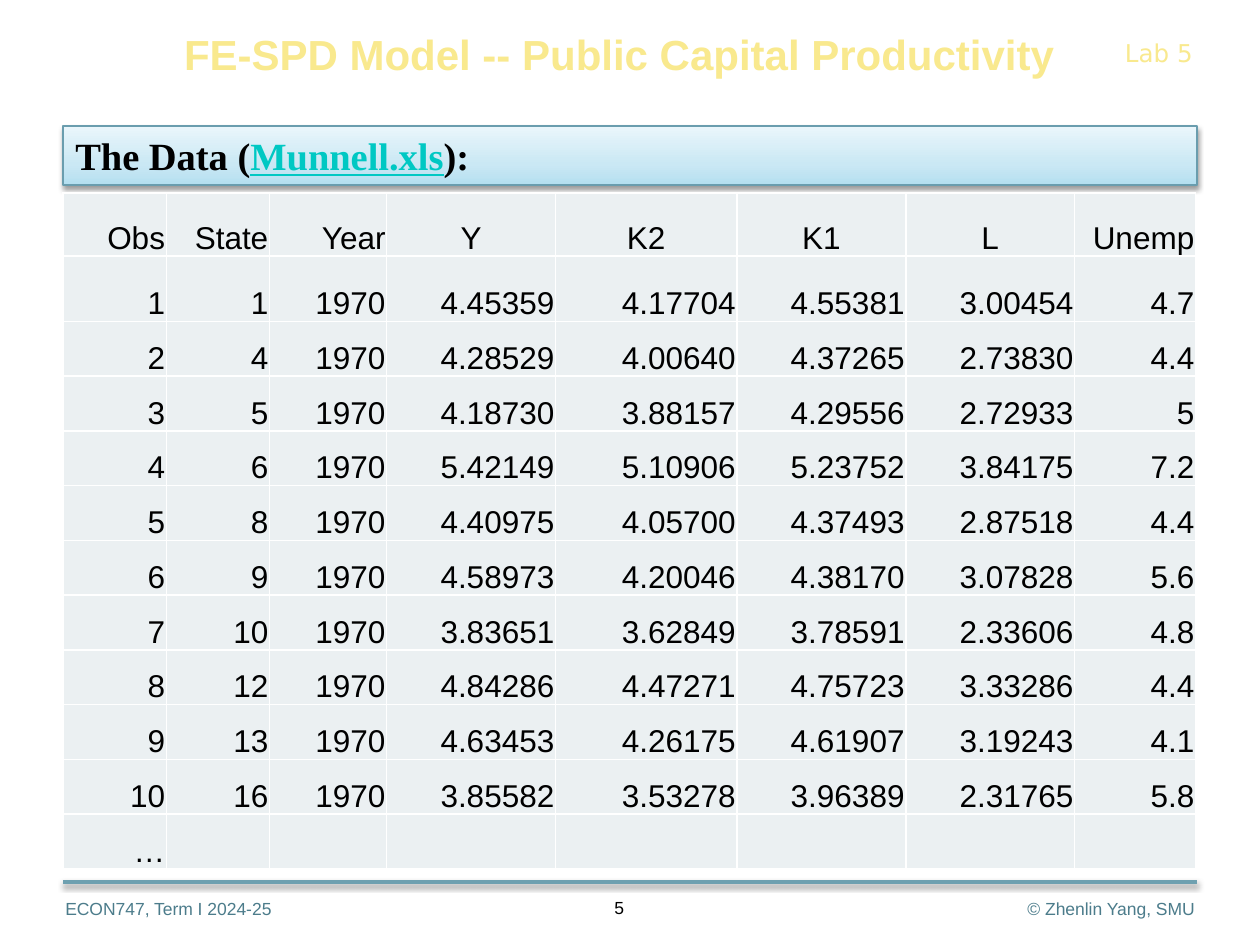
"""Builds the slide that lists the first rows of the public capital productivity data."""
from copy import deepcopy

from lxml import etree
from pptx import Presentation
from pptx.dml.color import RGBColor
from pptx.enum.shapes import MSO_CONNECTOR, MSO_SHAPE
from pptx.enum.text import MSO_ANCHOR, MSO_AUTO_SIZE, PP_ALIGN
from pptx.oxml.ns import qn
from pptx.util import Inches, Pt

LEFT, CENTER, RIGHT = PP_ALIGN.LEFT, PP_ALIGN.CENTER, PP_ALIGN.RIGHT
TOP, MIDDLE, BOTTOM = MSO_ANCHOR.TOP, MSO_ANCHOR.MIDDLE, MSO_ANCHOR.BOTTOM
GROW, FIXED = MSO_AUTO_SIZE.SHAPE_TO_FIT_TEXT, MSO_AUTO_SIZE.NONE
COLORS = {
    "title": "F9E98E", "footer": "4C7C8B", "text": "000000", "file": "00C8C3",
    "rule": "6EA0B0", "banner_line": "6A9DAE", "cell": "EBF0F2",
    "banner_low": "B4DFF0", "banner_mid": "CAE8F4", "banner_high": "EAF6FB",
}
RGB = {part: RGBColor.from_string(value) for part, value in COLORS.items()}

deck = Presentation()
deck.slide_width, deck.slide_height = Inches(10), Inches(7.5)
COL, ROW = deck.slide_width / 100, deck.slide_height / 75
slide = deck.slides.add_slide(deck.slide_layouts[6])


def write(paragraph, text, color, align=LEFT, **font_format):
    paragraph.alignment = align
    run = paragraph.add_run()
    run.text = text
    run.font.color.rgb = RGB[color]
    for attribute, value in font_format.items():
        setattr(run.font, attribute, value)


def cast_shadow(item):
    effects = etree.SubElement(item._element.spPr, qn("a:effectLst"))
    shadow = etree.SubElement(effects, qn("a:outerShdw"), blurRad="40000",
                              dist="20000", dir="5400000", rotWithShape="0")
    tint = etree.SubElement(shadow, qn("a:srgbClr"), val=COLORS["text"])
    etree.SubElement(tint, qn("a:alpha"), val="38000")


footer_rule = slide.shapes.add_connector(
    MSO_CONNECTOR.STRAIGHT, int(5 * COL), int(70 * ROW), int(95 * COL), int(70 * ROW))
footer_rule.line.color.rgb = RGB["rule"]
footer_rule.line.width = Pt(2)
cast_shadow(footer_rule)

small = {"size": Pt(10), "name": "Arial"}
labels = [
    ("ECON747, Term I 2024-25", (4.2, 70.8, 23.3, 2.7), "footer", LEFT, TOP, GROW, True, small),
    ("© Zhenlin Yang, SMU", (72.5, 70.8, 23.3, 2.7), "footer", RIGHT, TOP, GROW, True, small),
    ("Lab 5", (88.3, 2.5, 7.4, 3.4), "title", LEFT, TOP, GROW, False,
     {"size": Pt(14), "name": "DejaVu Sans"}),
    ("5", (37.5, 70.7, 23.3, 2.7), "text", CENTER, MIDDLE, FIXED, True, small),
    ("FE-SPD Model -- Public Capital Productivity", (13.3, 1.8, 71.7, 4.9), "title",
     CENTER, MIDDLE, FIXED, True, {"size": Pt(24), "name": "Arial", "bold": True}),
]
for text, (x, y, width, height), color, align, anchor, sizing, wrap, font_format in labels:
    label = slide.shapes.add_textbox(
        int(x * COL), int(y * ROW), int(width * COL), int(height * ROW)).text_frame
    frame_format = {"word_wrap": wrap, "auto_size": sizing, "vertical_anchor": anchor}
    for attribute, value in frame_format.items():
        setattr(label, attribute, value)
    write(label.paragraphs[0], text, color, align, **font_format)

banner = slide.shapes.add_shape(
    MSO_SHAPE.RECTANGLE, int(5 * COL), int(10 * ROW), int(90 * COL), int(4.7 * ROW))
banner.fill.gradient()
banner.fill.gradient_angle = 90
stop_list = banner._element.spPr.find(".//" + qn("a:gsLst"))
stop_list.append(deepcopy(stop_list[-1]))
banner_stops = [("banner_low", 0), ("banner_mid", 0.35), ("banner_high", 1)]
for stop, (color, position) in zip(banner.fill.gradient_stops, banner_stops):
    stop.color.rgb = RGB[color]
    stop.position = position
banner.line.color.rgb = RGB["banner_line"]
banner.line.width = Pt(0.75)
cast_shadow(banner)
banner.text_frame.word_wrap = True
banner.text_frame.auto_size = GROW
banner.text_frame.vertical_anchor = TOP
heading = {"size": Pt(22), "name": "Times New Roman", "bold": True}
for text, color, underline in [
        ("The Data (", "text", False), ("Munnell.xls", "file", True), ("):", "text", False)]:
    write(banner.text_frame.paragraphs[0], text, color, underline=underline, **heading)

records = [line.split() for line in """
Obs State Year Y K2 K1 L Unemp
1 1 1970 4.45359 4.17704 4.55381 3.00454 4.7
2 4 1970 4.28529 4.00640 4.37265 2.73830 4.4
3 5 1970 4.18730 3.88157 4.29556 2.72933 5
4 6 1970 5.42149 5.10906 5.23752 3.84175 7.2
5 8 1970 4.40975 4.05700 4.37493 2.87518 4.4
6 9 1970 4.58973 4.20046 4.38170 3.07828 5.6
7 10 1970 3.83651 3.62849 3.78591 2.33606 4.8
8 12 1970 4.84286 4.47271 4.75723 3.33286 4.4
9 13 1970 4.63453 4.26175 4.61907 3.19243 4.1
10 16 1970 3.85582 3.53278 3.96389 2.31765 5.8
…
""".strip().splitlines()]
column_shares = [8.2, 8.2, 9.3, 13.4, 14.4, 13.4, 13.4, 9.6]
row_shares = [5, 5.2] + [4.35] * (len(records) - 2)
data = slide.shapes.add_table(
    len(records), len(column_shares), int(5 * COL), int(15.3 * ROW),
    int(sum(column_shares) * COL), int(sum(row_shares) * ROW)).table
data.first_row = data.horz_banding = False
for column, share in zip(data.columns, column_shares):
    column.width = int(share * COL)
for row, share in zip(data.rows, row_shares):
    row.height = int(share * ROW)

cell_format = {"margin_left": Inches(0.01), "margin_right": Inches(0.01),
               "margin_top": Inches(0.01), "margin_bottom": 0, "vertical_anchor": BOTTOM}
for cell in data.iter_cells():
    cell.fill.solid()
    cell.fill.fore_color.rgb = RGB["cell"]
    for attribute, value in cell_format.items():
        setattr(cell, attribute, value)
for r, record in enumerate(records):
    for c, value in enumerate(record):
        align = CENTER if r == 0 and 3 <= c <= 6 else RIGHT
        write(data.cell(r, c).text_frame.paragraphs[0], value, "text", align,
              size=Pt(18), name="Arial")

deck.save("out.pptx")
